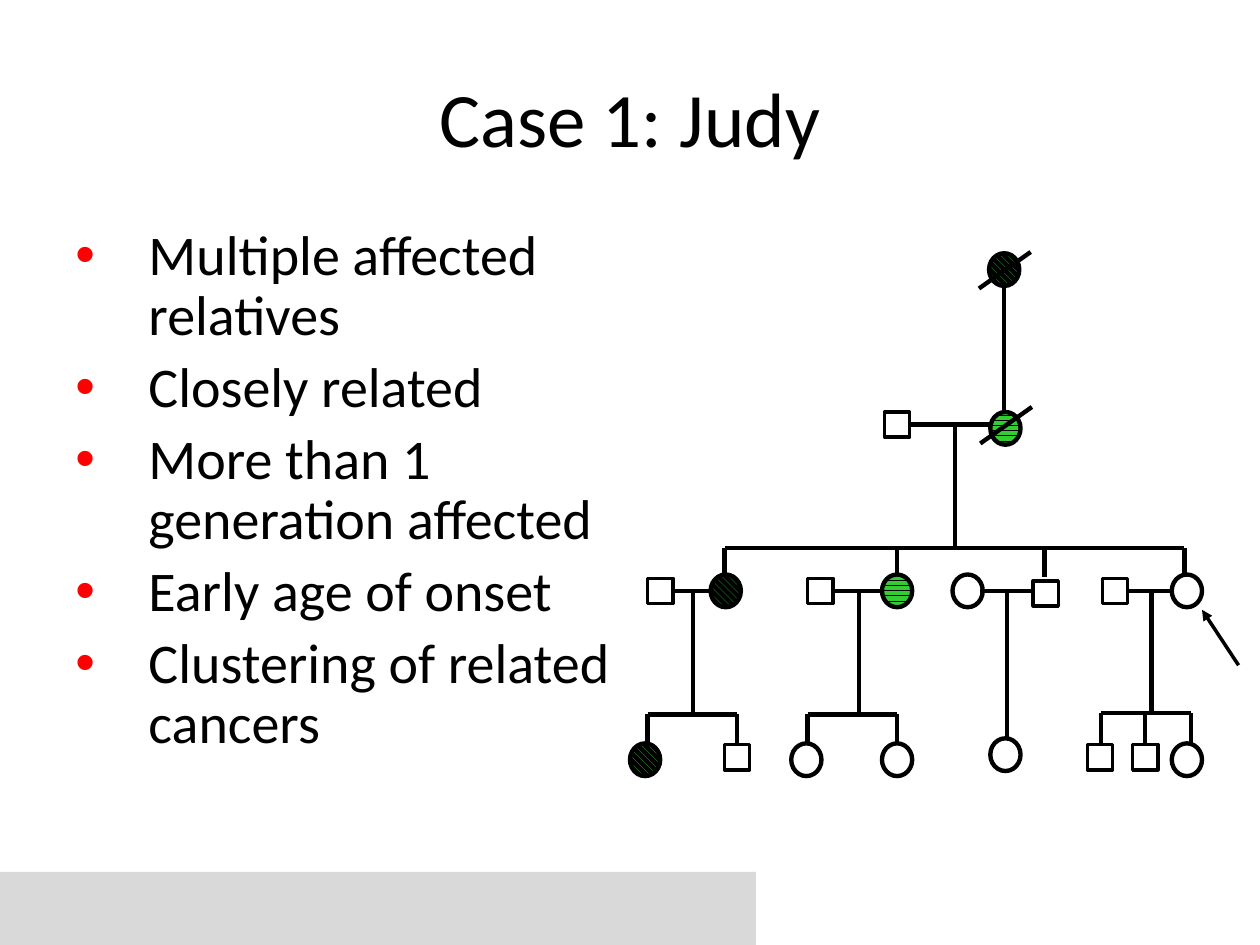
from lxml import etree
from pptx import Presentation
from pptx import util as u
from pptx.dml.color import RGBColor
from pptx.enum import dml, shapes, text
from pptx.oxml.ns import qn

PX = 9144
BLACK = RGBColor(0x00, 0x00, 0x00)
GREEN = RGBColor(0x33, 0xCC, 0x33)
GREY = RGBColor(0xD9, 0xD9, 0xD9)
RED = RGBColor(0xFF, 0x00, 0x00)
FONT = "Calibri"
DIAGONAL = dml.MSO_PATTERN.WIDE_DOWNWARD_DIAGONAL
STRIPED = dml.MSO_PATTERN.DARK_HORIZONTAL

FEATURES = [
    "Multiple affected relatives",
    "Closely related",
    "More than 1 generation affected",
    "Early age of onset",
    "Clustering of related cancers",
]
MALES = [(202, 127), (14, 259), (141, 259), (320, 261), (375, 259),
         (75, 391), (363, 391), (399, 391)]
FEMALES = [
    (285, 1, DIAGONAL), (286, 127, STRIPED),
    (64, 256, DIAGONAL), (200, 256, STRIPED), (256, 256, None), (430, 256, None),
    (0, 390, DIAGONAL), (128, 390, None), (200, 390, None),
    (286, 386, None), (430, 390, None),
]
FAMILIES = [
    ((222, 288), 137, 258, 235, (75, 212, 329, 440), 258),
    ((35, 65), 269, 50, 367, (14, 85), 391),
    ((162, 202), 269, 182, 367, (141, 212), 391),
    ((278, 319), 269, 299, 367, (299,), 386),
    ((394, 429), 269, 414, 366, (374, 409, 445), 391),
]
MATERNAL_LINE = (297, 28, 297, 126)
DECEASED = [(318, 0, 277, 29), (319, 123, 278, 152)]
PROBAND_ARROW = (483, 328, 454, 284)


def emu(*lengths):
    """Turn px lengths into EMU."""
    return [u.Emu(length * PX) for length in lengths]


def add_frame(slide, box):
    """Add a wrapping text box and return its text frame."""
    frame = slide.shapes.add_textbox(*emu(*box)).text_frame
    frame.word_wrap = True
    return frame


def style(paragraph, size):
    """Set the font of a paragraph."""
    paragraph.font.name = FONT
    paragraph.font.size = u.Pt(size)
    paragraph.font.color.rgb = BLACK


def add_bullet(paragraph, indent):
    """Give a paragraph a hanging red bullet."""
    properties = paragraph._p.get_or_add_pPr()
    properties.set("marL", str(indent * PX))
    properties.set("indent", str(-indent * PX))
    color = etree.SubElement(properties, qn("a:buClr"))
    etree.SubElement(color, qn("a:srgbClr"), val=str(RED))
    etree.SubElement(properties, qn("a:buFont"), typeface="Arial")
    etree.SubElement(properties, qn("a:buChar"), char="•")


def add_line(slide, box, ends, width=2.5):
    """Draw a black line between two points of a box."""
    x1, y1, x2, y2 = ends
    left, top = box[:2]
    line = slide.shapes.add_connector(
        shapes.MSO_CONNECTOR.STRAIGHT,
        *emu(left + x1, top + y1, left + x2, top + y2))
    line.line.color.rgb = BLACK
    line.line.width = u.Pt(width)
    etree.SubElement(line._element.spPr, qn("a:effectLst"))
    return line


def add_person(slide, box, place, size, kind, width, pattern=None):
    """Draw one pedigree symbol, patterned if the person is affected."""
    left, top = box[0] + place[0], box[1] + place[1]
    person = slide.shapes.add_shape(kind, *emu(left, top, *size))
    person.shadow.inherit = False
    person.line.color.rgb = BLACK
    person.line.width = u.Pt(width)
    if pattern is None:
        person.fill.background()
    else:
        person.fill.patterned()
        person.fill.pattern = pattern
        person.fill.fore_color.rgb = GREEN
        person.fill.back_color.rgb = BLACK


def add_family(slide, box, couple, couple_y, drop, bar_y, children, child_y):
    """Draw the lines that join a couple to their children."""
    add_line(slide, box, (couple[0], couple_y, couple[1], couple_y))
    if len(children) == 1:
        add_line(slide, box, (drop, couple_y, drop, child_y))
        return
    add_line(slide, box, (drop, couple_y, drop, bar_y))
    add_line(slide, box, (children[0], bar_y, children[-1], bar_y))
    for child in children:
        add_line(slide, box, (child, bar_y, child, child_y))


def add_footer(slide, box):
    """Place the grey footer band."""
    band = slide.shapes.add_shape(shapes.MSO_SHAPE.RECTANGLE, *emu(*box))
    band.shadow.inherit = False
    band.fill.solid()
    band.fill.fore_color.rgb = GREY
    band.line.fill.background()


def add_title(slide, box):
    """Place the centred case title."""
    frame = add_frame(slide, box)
    frame.vertical_anchor = text.MSO_ANCHOR.MIDDLE
    title = frame.paragraphs[0]
    title.text = "Case 1: Judy"
    title.alignment = text.PP_ALIGN.CENTER
    style(title, 44)


def add_features(slide, box):
    """Place the bulleted list of family features."""
    frame = add_frame(slide, box)
    for index, wording in enumerate(FEATURES):
        feature = frame.add_paragraph() if index else frame.paragraphs[0]
        feature.text = wording
        add_bullet(feature, 58)
        feature.line_spacing = 0.9
        feature.space_before = u.Pt(6.4)
        style(feature, 32)


def add_pedigree(slide, box):
    """Draw the family tree with its affected members and proband."""
    for family in FAMILIES:
        add_family(slide, box, *family)
    add_line(slide, box, MATERNAL_LINE)
    for place in MALES:
        add_person(slide, box, place, (20, 20), shapes.MSO_SHAPE.RECTANGLE, 2)
    for x, y, pattern in FEMALES:
        add_person(slide, box, (x, y), (24, 26), shapes.MSO_SHAPE.OVAL, 2.5, pattern)
    for strike in DECEASED:
        add_line(slide, box, strike)
    arrow = add_line(slide, box, PROBAND_ARROW, 2)
    etree.SubElement(arrow.line._get_or_add_ln(), qn("a:tailEnd"), type="triangle")


def main():
    """Build and save the slide."""
    deck = Presentation()
    deck.slide_width, deck.slide_height = emu(1000, 750)
    slide = deck.slides.add_slide(deck.slide_layouts[6])
    add_footer(slide, (0, 692, 600, 58))
    add_title(slide, (50, 30, 900, 125))
    add_features(slide, (50, 175, 505, 495))
    add_pedigree(slide, (500, 200, 483, 416))
    deck.save("out.pptx")


if __name__ == "__main__":
    main()
